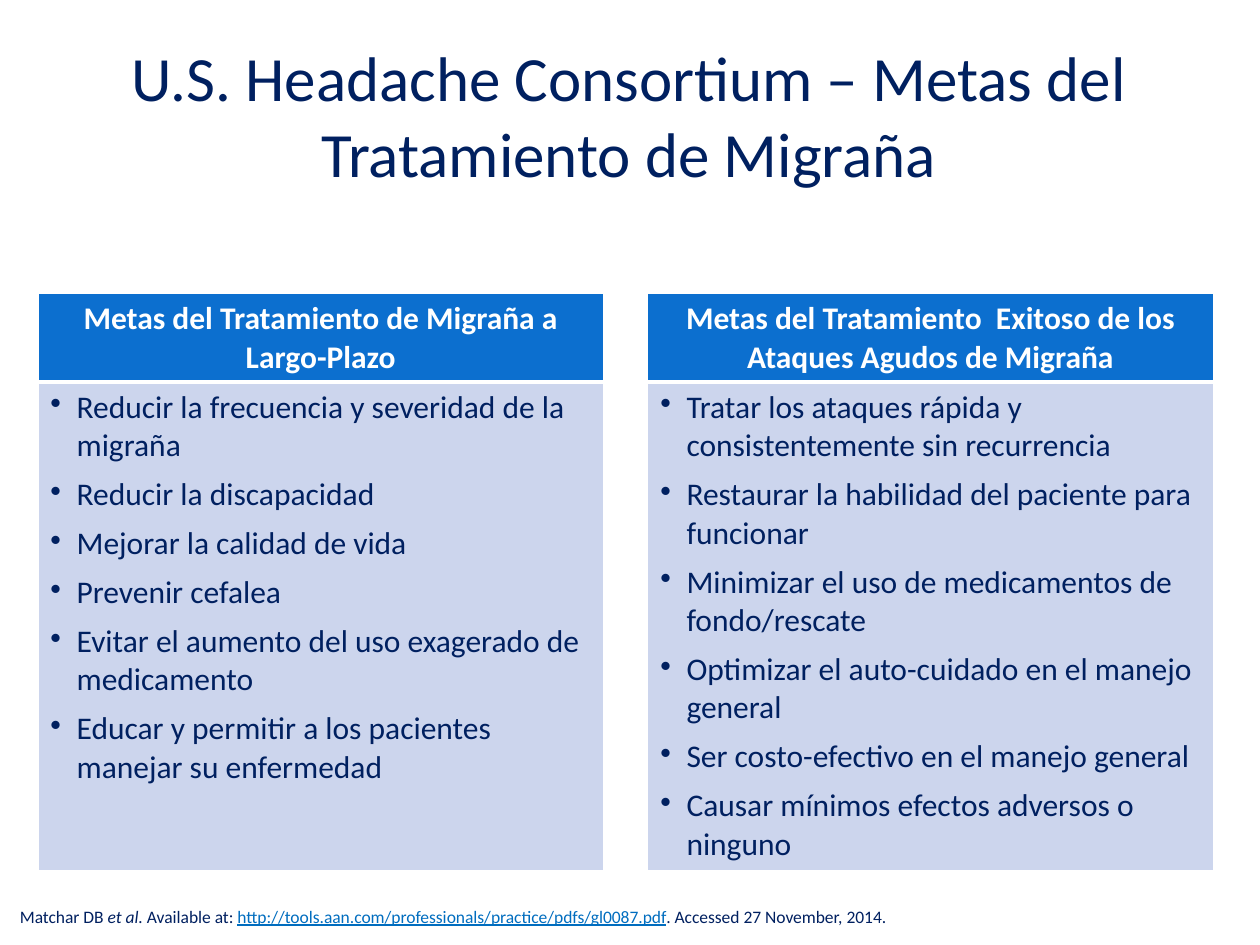
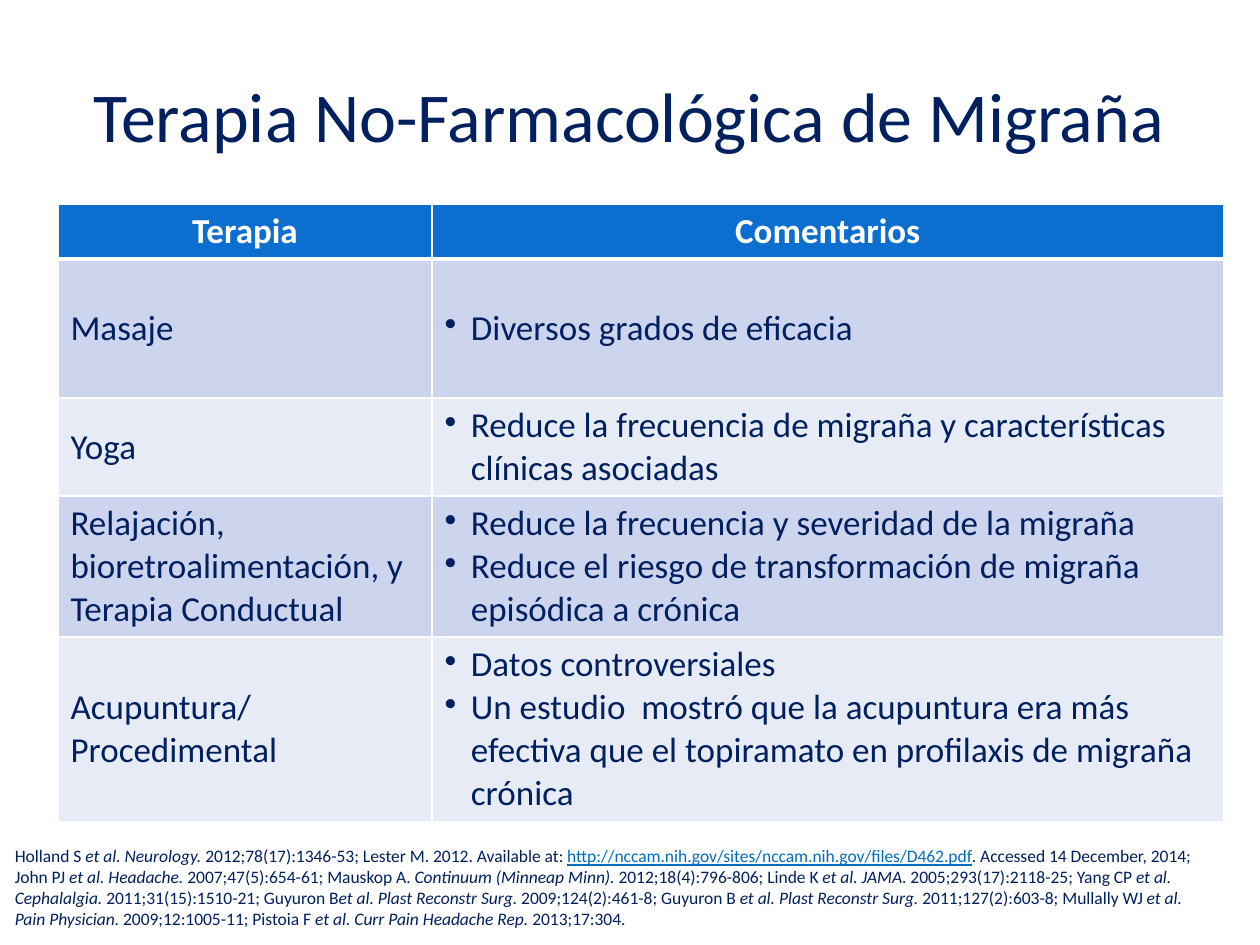
"""Build two slides on migraine treatment goals and non-drug therapies."""
import dataclasses

import lxml.etree
import pptx
import pptx.dml.color
import pptx.enum.text
import pptx.oxml.ns
import pptx.util

Pt = pptx.util.Pt
RGB = pptx.dml.color.RGBColor.from_string
qn = pptx.oxml.ns.qn
ALIGN = pptx.enum.text.PP_ALIGN
ANCHOR = pptx.enum.text.MSO_ANCHOR


@dataclasses.dataclass(frozen=True)
class Theme:
    font: str = "Calibri"
    ink: str = "002060"
    white: str = "FFFFFF"
    header: str = "0C6FCF"
    band: str = "CCD5ED"
    pale_band: str = "E7EBF6"
    link: str = "006DBF"
    goals_title: int = 36
    therapy_title: int = 40
    goals_text: int = 18
    therapy_text: int = 20
    source_text: int = 10


theme = Theme()


def write(frame, texts, size, color=theme.ink, align=ALIGN.LEFT, bold=False, bullet=False, after=0):
    frame.word_wrap = True
    for index, text in enumerate(texts):
        para = frame.paragraphs[0] if index == 0 else frame.add_paragraph()
        para.text = text
        para.alignment = align
        para.space_after = Pt(after)
        if bullet:
            properties = para._p.get_or_add_pPr()
            properties.set("marL", str(Pt(15)))
            properties.set("indent", str(-Pt(15)))
            lxml.etree.SubElement(properties, qn("a:buChar"), char="•")
        para.font.name = theme.font
        para.font.size = Pt(size)
        para.font.bold = bold
        para.font.color.rgb = RGB(color)


def paint(cell, fill, bottom=1, anchor=ANCHOR.MIDDLE):
    cell.vertical_anchor = anchor
    if fill:
        cell.fill.solid()
        cell.fill.fore_color.rgb = RGB(fill)
    else:
        cell.fill.background()
    properties = cell._tc.get_or_add_tcPr()
    for index, side in enumerate("LRTB"):
        width = bottom if side == "B" else 1
        line = lxml.etree.Element(qn("a:ln" + side), w=str(Pt(width)))
        solid = lxml.etree.SubElement(line, qn("a:solidFill"))
        lxml.etree.SubElement(solid, qn("a:srgbClr"), val=theme.white)
        properties.insert(index, line)


goals = {
    "Metas del Tratamiento de Migraña a Largo-Plazo": [
        "Reducir la frecuencia y severidad de la migraña",
        "Reducir la discapacidad",
        "Mejorar la calidad de vida",
        "Prevenir cefalea",
        "Evitar el aumento del uso exagerado de medicamento",
        "Educar y permitir a los pacientes manejar su enfermedad",
    ],
    "Metas del Tratamiento  Exitoso de los Ataques Agudos de Migraña": [
        "Tratar los ataques rápida y consistentemente sin recurrencia",
        "Restaurar la habilidad del paciente para funcionar",
        "Minimizar el uso de medicamentos de fondo/rescate",
        "Optimizar el auto-cuidado en el manejo general",
        "Ser costo-efectivo en el manejo general",
        "Causar mínimos efectos adversos o ninguno",
    ],
}
therapies = {
    "Masaje": ["Diversos grados de eficacia"],
    "Yoga": ["Reduce la frecuencia de migraña y características clínicas asociadas"],
    "Relajación, bioretroalimentación, y Terapia Conductual": [
        "Reduce la frecuencia y severidad de la migraña",
        "Reduce el riesgo de transformación de migraña episódica a crónica",
    ],
    "Acupuntura/\nProcedimental": [
        "Datos controversiales",
        "Un estudio  mostró que la acupuntura era más efectiva que el topiramato "
        "en profilaxis de migraña crónica",
    ],
}
goals_source = [
    ("plain", "Matchar DB "),
    ("italic", "et al. "),
    ("plain", "Available at: "),
    ("link", "http://tools.aan.com/professionals/practice/pdfs/gl0087.pdf"),
    ("plain", ". Accessed 27 November, 2014."),
]
therapy_source = [
    ("plain", "Holland S "),
    ("italic", "et al. Neurology. "),
    ("plain", "2012;78(17):1346-53; Lester M. 2012. Available at: "),
    ("link", "http://nccam.nih.gov/sites/nccam.nih.gov/files/D462.pdf"),
    ("plain", ". Accessed 14 December, 2014; John PJ "),
    ("italic", "et al. Headache. "),
    ("plain", "2007;47(5):654-61; Mauskop A. "),
    ("italic", "Continuum (Minneap Minn). "),
    ("plain", "2012;18(4):796-806; Linde K "),
    ("italic", "et al. JAMA"),
    ("plain", ". 2005;293(17):2118-25; Yang CP "),
    ("italic", "et al. Cephalalgia. "),
    ("plain", "2011;31(15):1510-21; Guyuron B"),
    ("italic", "et al. Plast Reconstr Surg. "),
    ("plain", "2009;124(2):461-8; Guyuron B "),
    ("italic", "et al. Plast Reconstr Surg."),
    ("plain", " 2011;127(2):603-8; Mullally WJ "),
    ("italic", "et al. Pain Physician. "),
    ("plain", "2009;12:1005-11; Pistoia F "),
    ("italic", "et al. Curr Pain Headache Rep. "),
    ("plain", "2013;17:304."),
]
pages = [
    ("U.S. Headache Consortium – Metas del Tratamiento de Migraña", theme.goals_title,
     goals_source, (4.3, 514.1, 705.6, 19.4),
     (21.6, 167.8), [323.3, 25.2, 323.3], [50, 279.5]),
    ("Terapia No-Farmacológica de Migraña", theme.therapy_title,
     therapy_source, (1.4, 479.5, 698.4, 55.4),
     (33.1, 116.6), [213.8, 452.2], [31.4, 79.4, 56.2, 80.4, 105.6]),
]

deck = pptx.Presentation()
deck.slide_width, deck.slide_height = Pt(720), Pt(540)
tables = []
for title, title_size, source, source_place, corner, widths, heights in pages:
    page = deck.slides.add_slide(deck.slide_layouts[6])

    title_box = page.shapes.add_textbox(Pt(35.3), Pt(20.2), Pt(648), Pt(90))
    title_box.text_frame.vertical_anchor = ANCHOR.MIDDLE
    write(title_box.text_frame, [title], title_size, align=ALIGN.CENTER)

    table = page.shapes.add_table(
        len(heights), len(widths), *map(Pt, corner), Pt(sum(widths)), Pt(sum(heights))
    ).table
    for column, width in zip(table.columns, widths):
        column.width = Pt(width)
    for row, height in zip(table.rows, heights):
        row.height = Pt(height)
    tables.append(table)

    source_box = page.shapes.add_textbox(*map(Pt, source_place))
    write(source_box.text_frame, [""], theme.source_text)
    para = source_box.text_frame.paragraphs[0]
    for kind, text in source:
        span = para.add_run()
        span.text = text
        if kind == "italic":
            span.font.italic = True
        elif kind == "link":
            span.font.underline = True
            span.font.color.rgb = RGB(theme.link)

goals_table, therapy_table = tables
header_style = {"color": theme.white, "align": ALIGN.CENTER, "bold": True}

for column, (heading, items) in zip((0, 2), goals.items()):
    heading_cell, items_cell = goals_table.cell(0, column), goals_table.cell(1, column)
    paint(heading_cell, theme.header, bottom=3)
    write(heading_cell.text_frame, [heading], theme.goals_text, **header_style)
    paint(items_cell, theme.band, anchor=ANCHOR.TOP)
    write(items_cell.text_frame, items, theme.goals_text, bullet=True, after=6)
for row in range(2):
    paint(goals_table.cell(row, 1), None)

for column, heading in enumerate(["Terapia", "Comentarios"]):
    heading_cell = therapy_table.cell(0, column)
    paint(heading_cell, theme.header, bottom=3)
    write(heading_cell.text_frame, [heading], theme.therapy_text, **header_style)
for row, (therapy, comments) in enumerate(therapies.items(), start=1):
    fill = theme.band if row % 2 else theme.pale_band
    for column, texts in enumerate([[therapy], comments]):
        cell = therapy_table.cell(row, column)
        paint(cell, fill)
        write(cell.text_frame, texts, theme.therapy_text, bullet=column == 1)

deck.save("out.pptx")
